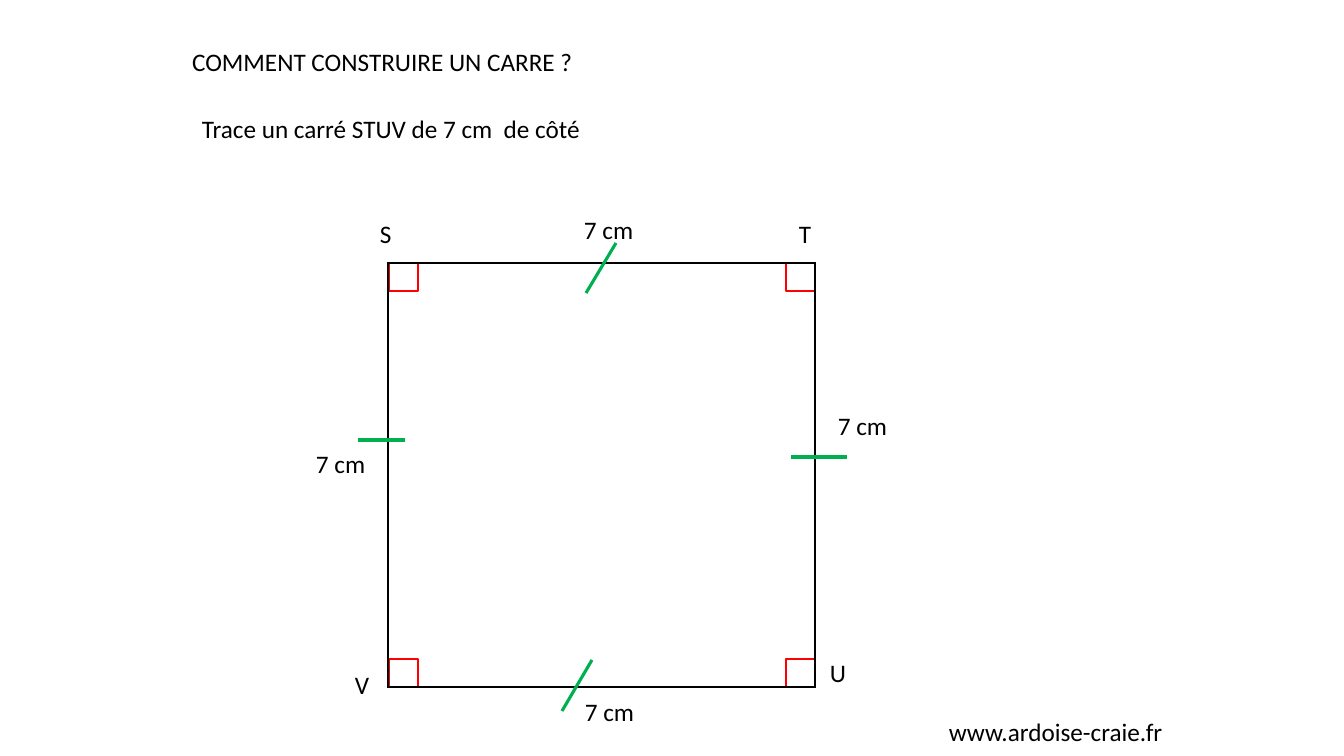
from lxml import etree
from pptx import Presentation
from pptx.dml.color import RGBColor
from pptx.enum.shapes import MSO_CONNECTOR, MSO_SHAPE
from pptx.enum.text import MSO_ANCHOR, MSO_AUTO_SIZE, PP_ALIGN
from pptx.oxml.ns import qn
from pptx.util import Pt

RECT = MSO_SHAPE.RECTANGLE
STRAIGHT = MSO_CONNECTOR.STRAIGHT
TOP = MSO_ANCHOR.TOP
NO_FIT = MSO_AUTO_SIZE.NONE
LEFT_ALIGN = PP_ALIGN.LEFT

COLORS = {"text": "000000", "side": "000000", "angle": "FF0000", "tick": "00B050"}
FONT = "Calibri"
TITLE = ("COMMENT CONSTRUIRE UN CARRE ?", 182, 41, 404)
TEXTS = [
    ("Trace un carré STUV de 7 cm  de côté", 192, 108, 403),
    ("S", 370, 213, 32),
    ("T", 789, 213, 32),
    ("U", 820, 652, 36),
    ("V", 345, 664, 35),
]
LENGTH = "7 cm"
LENGTH_SPOTS = [(574, 209), (828, 405), (575, 691), (306, 443)]
SITE = ("www.ardoise-craie.fr", 939, 711, 371)
LEFT, TOP_Y, RIGHT, BOTTOM = 388, 263, 815, 687
ANGLE_W, ANGLE_H = 29, 28
TICKS = [
    (616, 243, 586, 293),
    (592, 660, 562, 711),
    (405, 440, 358, 440),
    (847, 457, 791, 457),
]
TEXT_H = 40
PX = 914400 / 100.8


def px(n):
    return round(n * PX)


def rgb(name):
    return RGBColor.from_string(COLORS[name])


def write(sp, text, x, y, w, wrap=False, size=18, color="text"):
    sp.left, sp.top, sp.width, sp.height = px(x), px(y), px(w), px(TEXT_H)
    tf = sp.text_frame
    tf.word_wrap = wrap
    tf.auto_size = NO_FIT
    tf.vertical_anchor = TOP
    p = tf.paragraphs[0]
    p.alignment = LEFT_ALIGN
    p.line_spacing = 1.0
    r = p.add_run()
    r.text = text
    r.font.name = FONT
    r.font.size = Pt(size)
    r.font.color.rgb = rgb(color)


def add_line(s, ends, color, width):
    line = s.shapes.add_connector(STRAIGHT, *map(px, ends))
    line.line.color.rgb = rgb(color)
    line.line.width = Pt(width)
    etree.SubElement(line._element.spPr, qn("a:effectLst"))


def add_text(s, text, x, y, w, **fmt):
    write(s.shapes.add_textbox(0, 0, 0, 0), text, x, y, w, **fmt)


def add_angle(s, x, y):
    sp = s.shapes.add_shape(RECT, px(x), px(y), px(ANGLE_W), px(ANGLE_H))
    sp.shadow.inherit = False
    sp.fill.background()
    sp.line.color.rgb = rgb("angle")
    sp.line.width = Pt(1)


def main():
    prs = Presentation()
    prs.slide_width, prs.slide_height = px(1344), px(756)
    s = prs.slides.add_slide(prs.slide_layouts[5])
    write(s.shapes.title, *TITLE)

    for x in (LEFT + 1, RIGHT - ANGLE_W):
        for y in (TOP_Y, BOTTOM - ANGLE_H):
            add_angle(s, x, y)
    for y in (TOP_Y, BOTTOM):
        add_line(s, (LEFT, y, RIGHT, y), "side", 1.5)
    for x in (LEFT, RIGHT):
        add_line(s, (x, BOTTOM + 1, x, TOP_Y - 1), "side", 1.5)
    for ends in TICKS:
        add_line(s, ends, "tick", 2.25)

    for item in TEXTS:
        add_text(s, *item)
    for x, y in LENGTH_SPOTS:
        add_text(s, LENGTH, x, y, 71, wrap=True)
    add_text(s, *SITE, wrap=True)
    prs.save("out.pptx")


if __name__ == "__main__":
    main()
